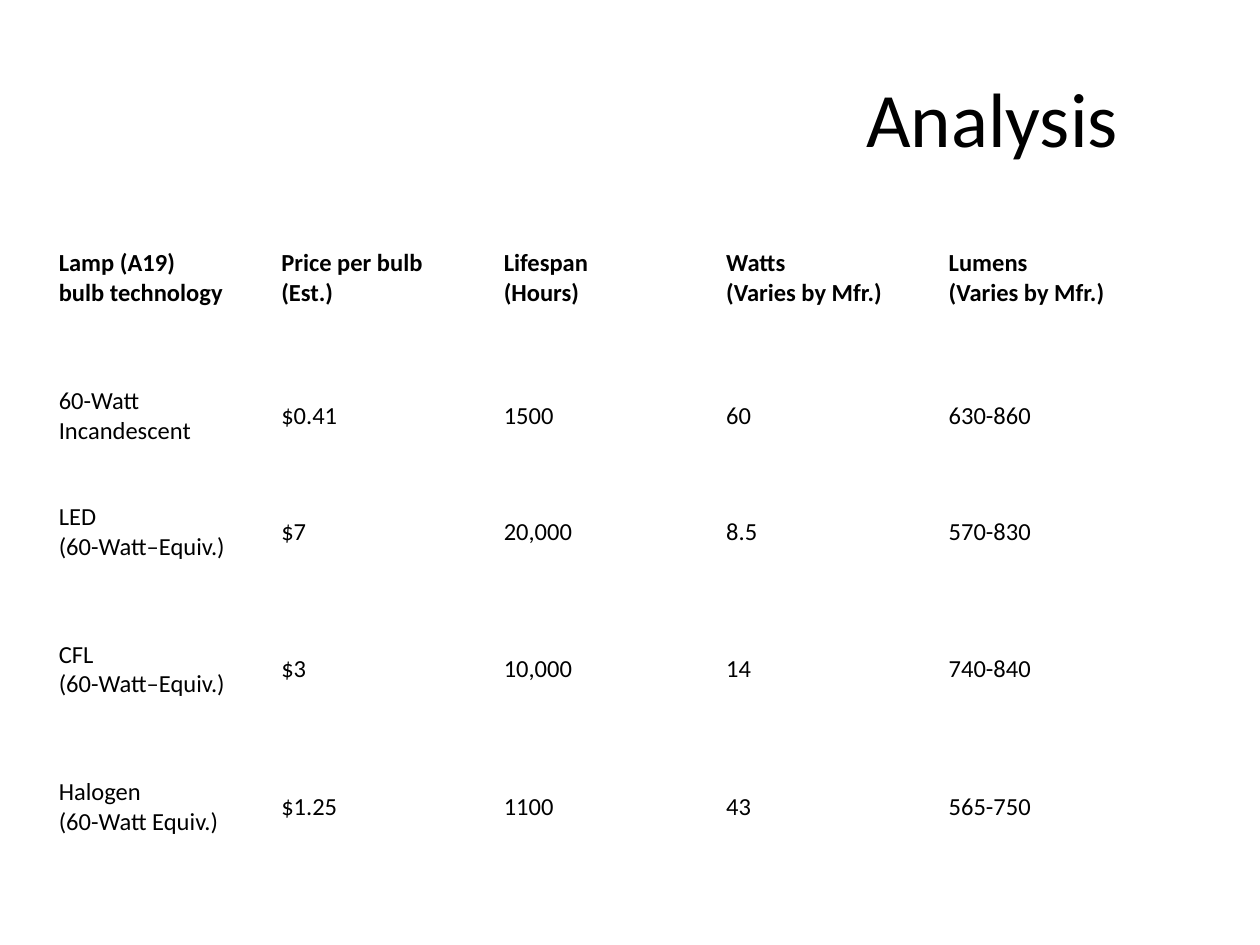
import dataclasses

import pptx
import pptx.dml.color
import pptx.enum.text
import pptx.util

Pt = pptx.util.Pt


@dataclasses.dataclass(frozen=True)
class Theme:
    font: str = "Calibri"
    ink: pptx.dml.color.RGBColor = pptx.dml.color.RGBColor(0, 0, 0)
    title_size: int = 44
    table_size: int = 14


THEME = Theme()
COLUMN_WIDTH = 127.15
ROW_HEIGHTS = [102.2, 54.7, 78.5, 78.5, 78.5]
LAMP_ROWS = [
    ["Lamp (A19) \nbulb technology", "Price per bulb\n(Est.)", "Lifespan\n(Hours)",
     "Watts\n(Varies by Mfr.)", "Lumens\n(Varies by Mfr.)"],
    ["60-Watt \nIncandescent", "$0.41", "1500", "60", "630-860"],
    ["LED \n(60-Watt–Equiv.)", "$7", "20,000", "8.5", "570-830"],
    ["CFL \n(60-Watt–Equiv.)", "$3", "10,000", "14", "740-840"],
    ["Halogen \n(60-Watt Equiv.)", "$1.25", "1100", "43", "565-750"],
]


def write(tf, text, size, bold=False, align=pptx.enum.text.PP_ALIGN.LEFT):
    p = tf.paragraphs[0]
    p.text = text
    p.alignment = align
    for r in p.runs:
        r.font.name = THEME.font
        r.font.size = Pt(size)
        r.font.bold = bold
        r.font.color.rgb = THEME.ink


def add_title(s, text, left, top, width, height):
    tf = s.shapes.add_textbox(Pt(left), Pt(top), Pt(width), Pt(height)).text_frame
    tf.word_wrap = True
    tf.vertical_anchor = pptx.enum.text.MSO_ANCHOR.MIDDLE
    write(tf, text, THEME.title_size, align=pptx.enum.text.PP_ALIGN.CENTER)


def fill_cell(cell, text, bold):
    cell.fill.background()
    cell.vertical_anchor = pptx.enum.text.MSO_ANCHOR.MIDDLE
    cell.margin_left = cell.margin_right = Pt(3.6)
    cell.margin_top = cell.margin_bottom = Pt(1.44)
    write(cell.text_frame, text, THEME.table_size, bold)


def add_lamp_table(s, rows, left, top):
    columns = len(rows[0])
    table = s.shapes.add_table(
        len(rows), columns, Pt(left), Pt(top),
        Pt(COLUMN_WIDTH * columns), Pt(sum(ROW_HEIGHTS))).table
    table.first_row = False
    table.horz_banding = False
    for column in table.columns:
        column.width = Pt(COLUMN_WIDTH)
    for i, (height, values) in enumerate(zip(ROW_HEIGHTS, rows)):
        table.rows[i].height = Pt(height)
        for j, text in enumerate(values):
            fill_cell(table.cell(i, j), text, bold=i == 0)


def main():
    prs = pptx.Presentation()
    prs.slide_width, prs.slide_height = Pt(720), Pt(540)
    s = prs.slides.add_slide(prs.slide_layouts[6])
    add_title(s, "Analysis", 450, 21.6, 234, 90)
    add_lamp_table(s, LAMP_ROWS, 30, 108)
    prs.save("out.pptx")


if __name__ == "__main__":
    main()
